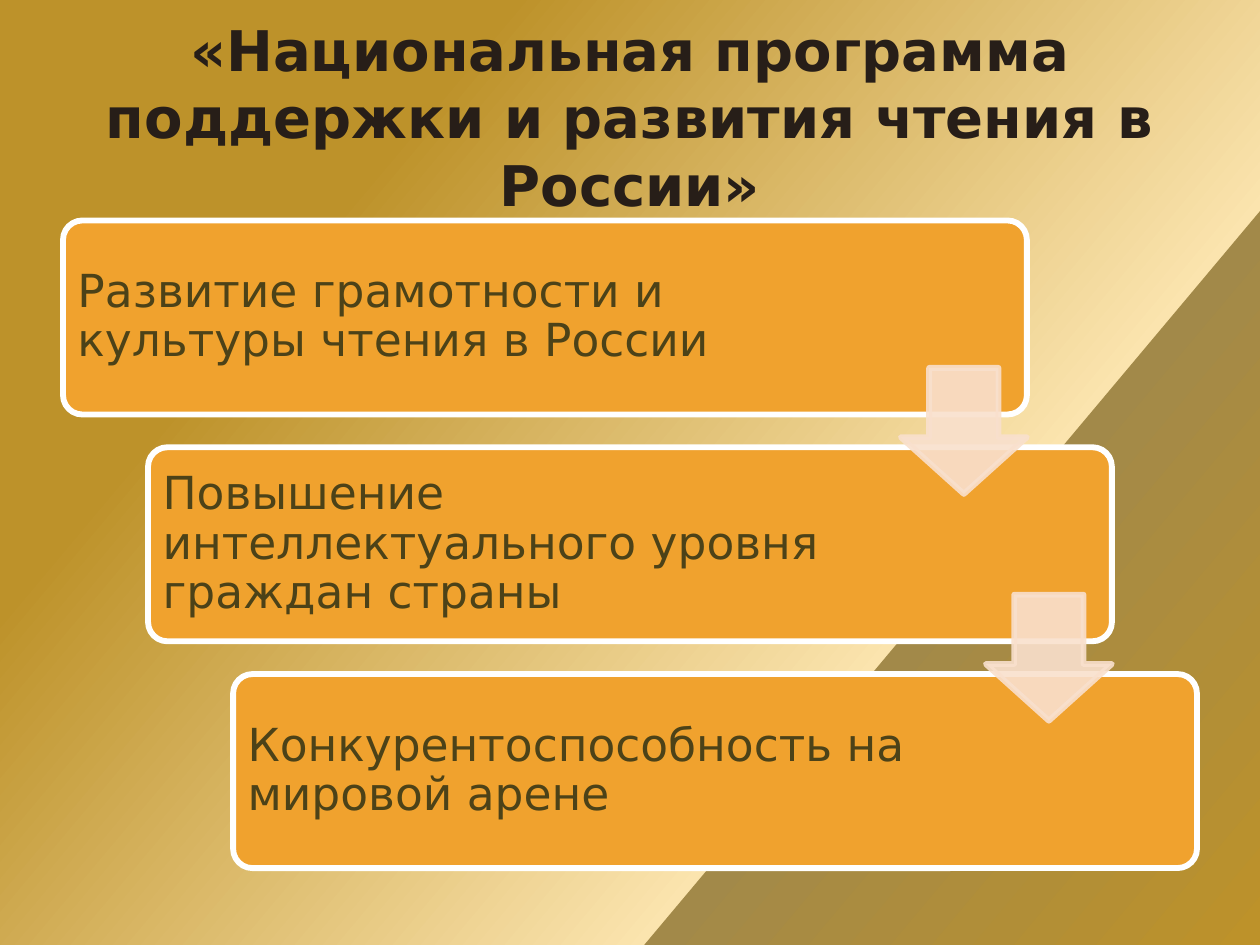
from lxml import etree
from pptx import Presentation
from pptx.dml.color import RGBColor
from pptx.enum import shapes, text
from pptx.oxml import ns
from pptx.util import Inches, Pt

COLORS = {
    "gold": "BD922A", "cream": "FBE4AE", "olive": "A28949",
    "title": "271E18", "card": "F0A22E", "border": "FFFFFF",
    "body": "4C4218", "arrow": "F9E0CD",
}
GOALS = [
    "Развитие грамотности и культуры чтения в России",
    "Повышение интеллектуального уровня граждан страны",
    "Конкурентоспособность на мировой арене",
]
CARD_W, CARD_H = 7.65, 1.54
LEFT, TOP, RIGHT = 0.5, 1.75, 9.5
STEP_X = (RIGHT - LEFT - CARD_W) / (len(GOALS) - 1)
STEP_Y = 1.8
ARROW_SIZE, ARROW_DROP = 1, 1.17


class Deck:
    font = "DejaVu Sans"
    border = Pt(3.35)

    def __init__(self):
        self.prs = Presentation()
        self.prs.slide_width, self.prs.slide_height = Inches(10), Inches(7.5)
        self.slide = self.prs.slides.add_slide(self.prs.slide_layouts[5])

    def color(self, name):
        return RGBColor.from_string(COLORS[name])

    def background(self, stops, angle):
        fill = self.slide.background.fill
        fill.gradient()
        fill.gradient_angle = 360 - angle
        stop_list = self.slide.element.find(".//" + ns.qn("a:gsLst"))
        for old in list(stop_list):
            stop_list.remove(old)
        for percent, name in stops:
            stop = etree.SubElement(stop_list, ns.qn("a:gs"), pos=str(percent * 1000))
            etree.SubElement(stop, ns.qn("a:srgbClr"), val=COLORS[name])

    def add_words(self, frame, words, size, color, bold=False):
        frame.word_wrap = True
        frame.vertical_anchor = text.MSO_ANCHOR.MIDDLE
        paragraph = frame.paragraphs[0]
        run = paragraph.add_run()
        run.text = words
        run.font.name, run.font.size, run.font.bold = self.font, Pt(size), bold
        run.font.color.rgb = self.color(color)
        return paragraph

    def title(self, words):
        heading = self.slide.shapes.title
        heading.left, heading.top = Inches(0.5), Inches(0.3)
        heading.width, heading.height = Inches(9), Inches(1.25)
        frame = heading.text_frame
        frame.auto_size = text.MSO_AUTO_SIZE.NONE
        paragraph = self.add_words(frame, words, 32, "title", bold=True)
        paragraph.alignment = text.PP_ALIGN.CENTER

    def shape(self, kind, x, y, w, h, fill, line, adjustments):
        item = self.slide.shapes.add_shape(kind, Inches(x), Inches(y), Inches(w), Inches(h))
        item.shadow.inherit = False
        item.fill.solid()
        item.fill.fore_color.rgb = self.color(fill)
        item.line.color.rgb = self.color(line)
        item.line.width = self.border
        for i, value in enumerate(adjustments):
            item.adjustments[i] = value
        return item

    def card(self, x, y, words):
        card = self.shape(shapes.MSO_SHAPE.ROUNDED_RECTANGLE, x, y, CARD_W, CARD_H,
                          "card", "border", [0.1])
        frame = card.text_frame
        frame.margin_left, frame.margin_right = Inches(0.07), Inches(1.74)
        paragraph = self.add_words(frame, words, 26, "body")
        paragraph.alignment = text.PP_ALIGN.LEFT
        paragraph.line_spacing = 0.9

    def arrow(self, x, y):
        arrow = self.shape(shapes.MSO_SHAPE.DOWN_ARROW, x, y, ARROW_SIZE, ARROW_SIZE,
                           "arrow", "arrow", [0.55, 0.45])
        # Fill and line are both 90 % opaque
        for tint in arrow.element.spPr.iter(ns.qn("a:srgbClr")):
            etree.SubElement(tint, ns.qn("a:alpha"), val="90000")


def main():
    deck = Deck()
    deck.background([(0, "gold"), (25, "gold"), (70, "cream"), (70, "olive"), (100, "gold")], 40)
    deck.title("«Национальная программа поддержки и развития чтения в России»")

    # Staircase of goals
    corners = [(LEFT + i * STEP_X, TOP + i * STEP_Y) for i in range(len(GOALS))]
    for (x, y), goal in zip(corners, GOALS):
        deck.card(x, y, goal)

    # Arrows from each goal to the next, flush with the card's right edge
    for x, y in corners[:-1]:
        deck.arrow(x + CARD_W - ARROW_SIZE, y + ARROW_DROP)

    deck.prs.save("out.pptx")


if __name__ == "__main__":
    main()
